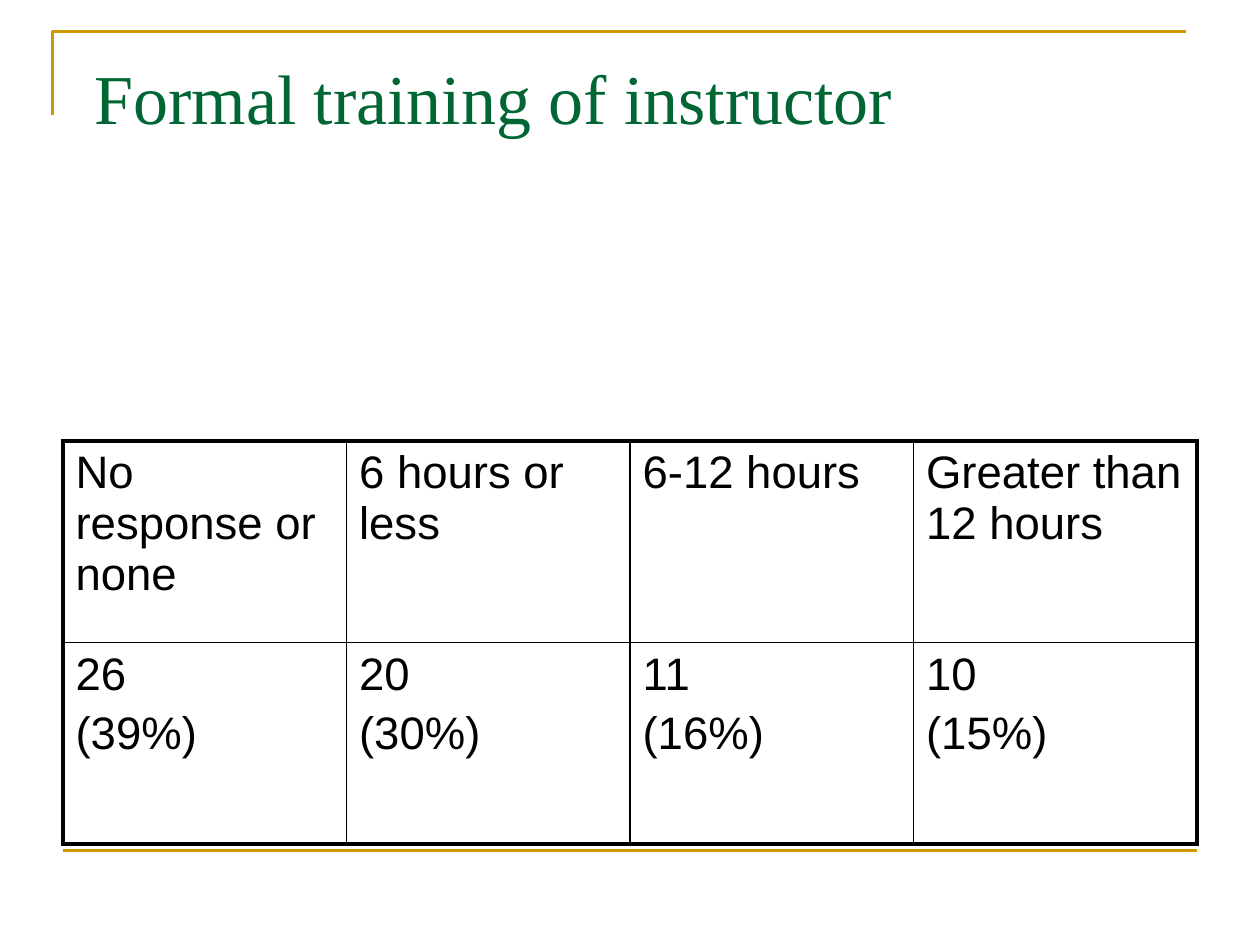
import pptx
import pptx.util
import pptx.dml.color
import pptx.enum.shapes
import pptx.enum.text
import pptx.oxml.ns
import lxml.etree

Pt = pptx.util.Pt
qn = pptx.oxml.ns.qn


def tint(code):
    return pptx.dml.color.RGBColor.from_string(code)


def edge(cell, side, width):
    line = lxml.etree.SubElement(cell._tc.get_or_add_tcPr(), qn("a:ln" + side), w=str(Pt(width)))
    fill = lxml.etree.SubElement(line, qn("a:solidFill"))
    lxml.etree.SubElement(fill, qn("a:srgbClr"), val="000000")


deck = pptx.Presentation()
deck.slide_width, deck.slide_height = Pt(720), Pt(540)
slide = deck.slides.add_slide(deck.slide_layouts[5])
shapes = slide.shapes

path = shapes.build_freeform(30, 66, scale=Pt(1))
path.add_line_segments([(30, 18), (678, 18)], close=False)
frame = path.convert_to_shape()
frame.fill.background()
frame.shadow.inherit = False

rule = shapes.add_connector(pptx.enum.shapes.MSO_CONNECTOR.STRAIGHT, Pt(36), Pt(486), Pt(684), Pt(486))
lxml.etree.SubElement(rule._element.spPr, qn("a:effectLst"))
for shape in (frame, rule):
    shape.line.color.rgb = tint("CC9900")
    shape.line.width = Pt(1.5)
    if shape is rule:
        effect = rule._element.spPr.find(qn("a:effectLst"))
        rule._element.spPr.append(effect)

title = shapes.title
title.left, title.top, title.width, title.height = Pt(0), Pt(21.6), Pt(648), Pt(90)
text = title.text_frame
text.text = "Formal training of instructor"
text.word_wrap = True
text.auto_size = pptx.enum.text.MSO_AUTO_SIZE.NONE
text.vertical_anchor = pptx.enum.text.MSO_ANCHOR.TOP
text.margin_left, text.margin_top = Pt(54), Pt(9.6)
text.paragraphs[0].alignment = pptx.enum.text.PP_ALIGN.LEFT
font = text.paragraphs[0].runs[0].font
font.name, font.size, font.color.rgb = "Times New Roman", Pt(40), tint("006633")

rows = [
    ["No response or none", "6 hours or less", "6-12 hours", "Greater than 12 hours"],
    ["26\n(39%)", "20\n(30%)", "11\n(16%)", "10\n(15%)"],
]
high, wide = len(rows), len(rows[0])
table = shapes.add_table(high, wide, Pt(36), Pt(252), Pt(648), Pt(230.4)).table
table.first_row = table.horz_banding = False
for r, row in enumerate(rows):
    for c, words in enumerate(row):
        cell = table.cell(r, c)
        cell.text_frame.text = words
        outer = {"L": c == 0, "R": c == wide - 1, "T": r == 0, "B": r == high - 1}
        for side, thick in outer.items():
            edge(cell, side, 2.25 if thick else 1)
        cell.fill.background()
        for i, para in enumerate(cell.text_frame.paragraphs):
            para.space_before = Pt(5 if i else 0)
            font = para.runs[0].font
            font.name, font.size, font.color.rgb = "Arial", Pt(26), tint("000000")

deck.save("out.pptx")
